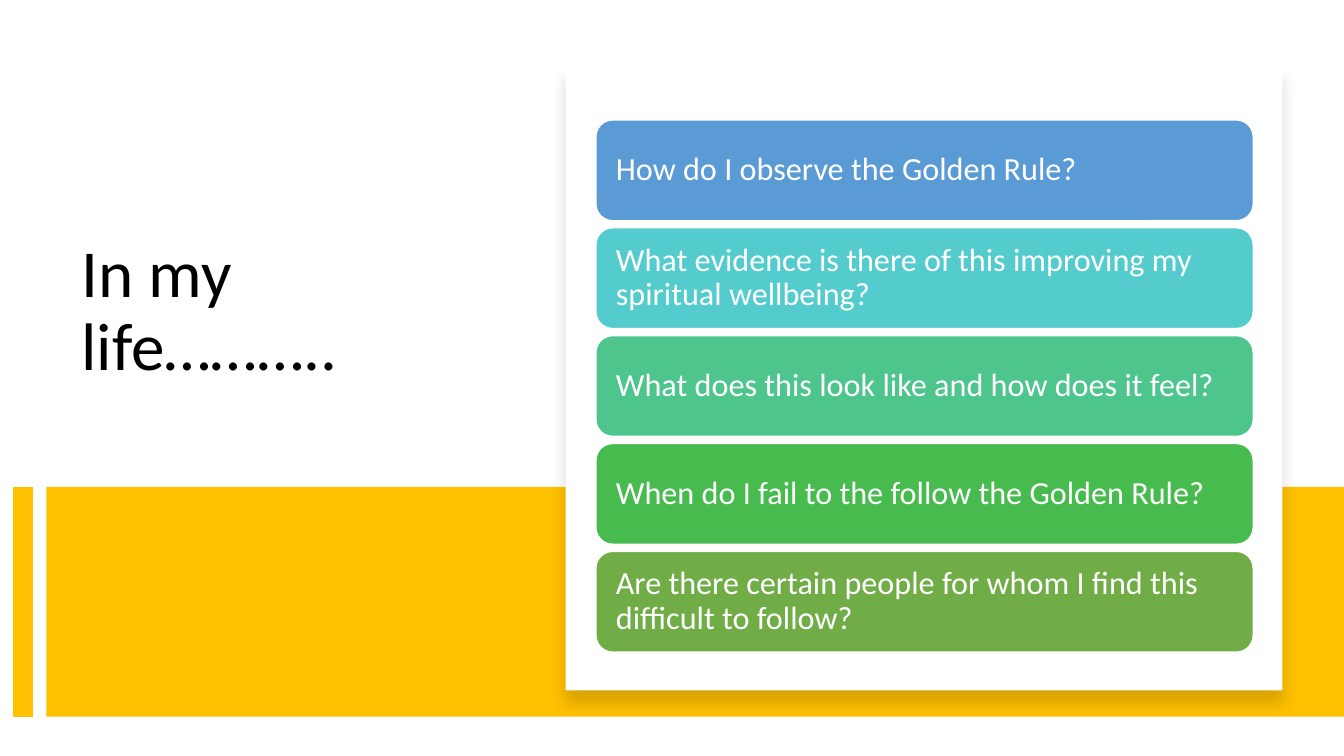
from lxml.etree import SubElement
from pptx import Presentation
from pptx.dml.color import RGBColor
from pptx.enum.shapes import MSO_CONNECTOR as Connector, MSO_SHAPE as Shape
from pptx.enum.text import MSO_ANCHOR as Anchor
from pptx.oxml.ns import qn
from pptx.util import Inches, Pt

COLORS = {
    "white": "FFFFFF",
    "black": "000000",
    "gold": "FFC000",
    "blue": "5B9BD5",
    "turquoise": "54CCCD",
    "mint": "4DC58D",
    "green": "48BB4F",
    "olive": "70AD47",
}
QUESTIONS = [
    ("How do I observe the Golden Rule?", "blue"),
    ("What evidence is there of this improving my spiritual wellbeing?", "turquoise"),
    ("What does this look like and how does it feel?", "mint"),
    ("When do I fail to the follow the Golden Rule?", "green"),
    ("Are there certain people for whom I find this difficult to follow?", "olive"),
]
FIRST_TOP = 1.19
QUESTION_PITCH = 1.07


def color(name):
    return RGBColor.from_string(COLORS[name])


def write_text(shape, text, size, color_name, anchor):
    frame = shape.text_frame
    frame.word_wrap = True
    frame.vertical_anchor = anchor
    paragraph = frame.paragraphs[0]
    paragraph.text = text
    paragraph.line_spacing = 0.9
    paragraph.font.name = "Calibri"
    paragraph.font.size = Pt(size)
    paragraph.font.color.rgb = color(color_name)
    return frame, paragraph


def add_title(slide, text):
    box = slide.shapes.add_textbox(Inches(0.71), Inches(1.6), Inches(4.15), Inches(2.94))
    frame, _ = write_text(box, text, 48, "black", Anchor.TOP)
    frame.margin_top = Inches(0.78)


def add_block(slide, kind, left, top, width, height, fill):
    block = slide.shapes.add_shape(
        kind, Inches(left), Inches(top), Inches(width), Inches(height))
    block.shadow.inherit = False
    block.fill.solid()
    block.fill.fore_color.rgb = color(fill)
    block.line.fill.background()
    return block


def add_soft_shadow(shape):
    effects = shape._element.spPr.find(qn("a:effectLst"))
    shadow = SubElement(
        effects, qn("a:outerShdw"), blurRad=str(Pt(11)), dist=str(Pt(10)),
        dir="5400000", algn="t", rotWithShape="0")
    shade = SubElement(shadow, qn("a:srgbClr"), val=COLORS["black"])
    SubElement(shade, qn("a:alpha"), val="15000")


def add_accent_line(slide, x, top, bottom):
    line = slide.shapes.add_connector(
        Connector.STRAIGHT, Inches(x), Inches(top), Inches(x), Inches(bottom))
    line.line.color.rgb = color("gold")
    line.line.width = Pt(14)
    SubElement(line._element.spPr, qn("a:effectLst"))


def add_question(slide, top, text, fill):
    block = add_block(slide, Shape.ROUNDED_RECTANGLE, 5.91, top, 6.52, 1, fill)
    block.line.color.rgb = color("white")
    block.line.width = Pt(1)
    frame, paragraph = write_text(block, text, 23, "white", Anchor.MIDDLE)
    frame.margin_left = frame.margin_right = Inches(0.15)
    frame.margin_top = frame.margin_bottom = Inches(0.15)
    paragraph.alignment = 1


def main():
    presentation = Presentation()
    presentation.slide_width = Inches(13.33)
    presentation.slide_height = Inches(7.5)
    slide = presentation.slides.add_slide(presentation.slide_layouts[6])

    add_title(slide, "In my life………..")
    add_block(slide, Shape.RECTANGLE, 0.46, 4.83, 12.87, 2.28, "gold")
    add_accent_line(slide, 0.23, 4.83, 7.11)
    card = add_block(slide, Shape.RECTANGLE, 5.61, 0.64, 7.11, 6.21, "white")
    add_soft_shadow(card)
    for index, (text, fill) in enumerate(QUESTIONS):
        add_question(slide, FIRST_TOP + index * QUESTION_PITCH, text, fill)

    presentation.save("out.pptx")


if __name__ == "__main__":
    main()
